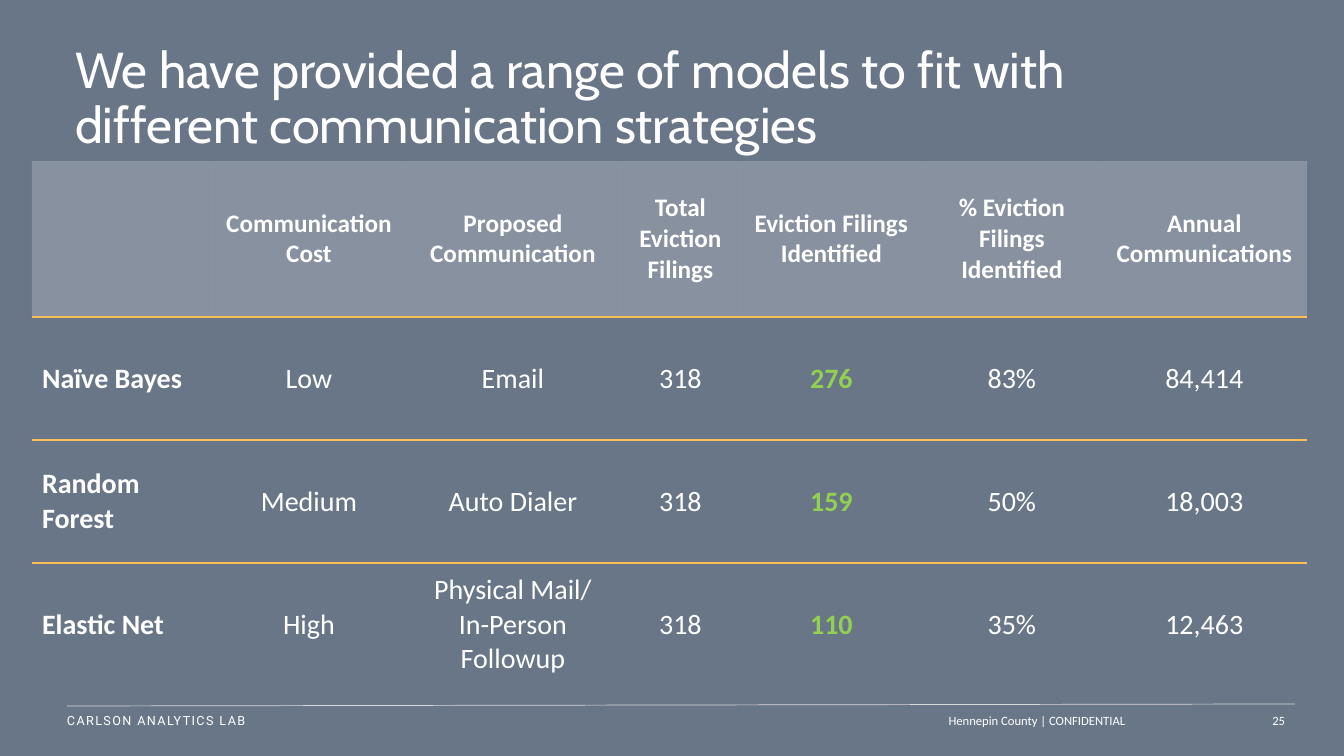
from lxml.etree import SubElement
from pptx import Presentation
from pptx.dml.color import RGBColor
from pptx.enum.shapes import MSO_CONNECTOR as Connector
from pptx.enum.text import MSO_ANCHOR as Anchor, PP_ALIGN as Align
from pptx.oxml import parse_xml
from pptx.oxml.ns import nsdecls, qn
from pptx.util import Pt

EMU_PER_PX = 12192000 / 1344

SLATE = RGBColor(0x69, 0x76, 0x88)
WHITE = RGBColor(0xFF, 0xFF, 0xFF)
RULE_GREY = RGBColor(0xD9, 0xD9, 0xD9)
AMBER = RGBColor(0xFD, 0xBE, 0x57)
GREEN = RGBColor(0x92, 0xD0, 0x50)

NO_STYLE = "{2D5ABB26-0587-4C30-8999-92F81FD0307C}"
COLUMN_WIDTHS = [180, 194, 214, 121, 181, 180, 205]
ROW_HEIGHTS = [156, 123, 123, 123]
IDENTIFIED_COLUMN = 4
MODELS = [
    ["", "Communication Cost", "Proposed Communication", "Total Eviction Filings",
     "Eviction Filings Identified", "% Eviction Filings Identified",
     "Annual Communications"],
    ["Naïve Bayes", "Low", "Email", "318", "276", "83%", "84,414"],
    ["Random Forest", "Medium", "Auto Dialer", "318", "159", "50%", "18,003"],
    ["Elastic Net", "High", "Physical Mail/\nIn-Person Followup", "318", "110", "35%",
     "12,463"],
]


def px(length):
    return round(length * EMU_PER_PX)


def style_text(frame, font, size, color=WHITE, bold=False, align=Align.LEFT):
    for paragraph in frame.paragraphs:
        paragraph.alignment = align
        for run in paragraph.runs:
            run.font.name = font
            run.font.size = Pt(size)
            run.font.bold = bold
            run.font.color.rgb = color


def add_label(slide, box, text, font, size, align=Align.LEFT, inset=10):
    """Add a vertically centred text box and return its first paragraph."""
    frame = slide.shapes.add_textbox(*map(px, box)).text_frame
    frame.word_wrap = True
    frame.vertical_anchor = Anchor.MIDDLE
    frame.margin_left = px(inset)
    frame.text = text
    style_text(frame, font, size, align=align)
    return frame.paragraphs[0]


def add_title(slide, box):
    title = add_label(
        slide, box,
        "We have provided a range of models to fit with different communication strategies",
        "Cabin", 36)
    title.line_spacing = 0.9


def underline(cell):
    cell._tc.get_or_add_tcPr().insert(0, parse_xml(
        f'<a:lnB {nsdecls("a")} w="{Pt(1)}"><a:solidFill>'
        f'<a:srgbClr val="{AMBER}"/></a:solidFill></a:lnB>'))


def tint(cell, percent):
    """Fill the cell with white at the given opacity."""
    cell.fill.solid()
    cell.fill.fore_color.rgb = WHITE
    white = cell._tc.tcPr.find(f'{qn("a:solidFill")}/{qn("a:srgbClr")}')
    SubElement(white, qn("a:alpha")).set("val", str(percent * 1000))


def fill_cell(cell, row, column):
    header, model_name = row == 0, column == 0
    identified = column == IDENTIFIED_COLUMN and not header
    cell.vertical_anchor = Anchor.MIDDLE
    cell.text_frame.text = MODELS[row][column]
    style_text(cell.text_frame, "Calibri", 18 if header else 20,
               color=GREEN if identified else WHITE,
               bold=header or model_name or identified,
               align=Align.LEFT if model_name else Align.CENTER)
    if header:
        tint(cell, 20)
    else:
        cell.fill.background()
    if row < len(MODELS) - 1:
        underline(cell)


def add_model_table(slide, left, top):
    frame = slide.shapes.add_table(
        len(MODELS), len(COLUMN_WIDTHS), px(left), px(top),
        px(sum(COLUMN_WIDTHS)), px(sum(ROW_HEIGHTS)))
    table = frame.table
    table.horz_banding = False
    table._tbl.tblPr.find(qn("a:tableStyleId")).text = NO_STYLE
    for column, width in zip(table.columns, COLUMN_WIDTHS):
        column.width = px(width)
    for row, height in zip(table.rows, ROW_HEIGHTS):
        row.height = px(height)
    for row in range(len(MODELS)):
        for column in range(len(COLUMN_WIDTHS)):
            fill_cell(table.cell(row, column), row, column)


def add_footer(slide, left, top, width):
    right = left + width
    rule = slide.shapes.add_connector(
        Connector.STRAIGHT, px(left), px(top + 2), px(right), px(top))
    rule.line.color.rgb = RULE_GREY
    rule.line.width = Pt(0.5)
    SubElement(rule._element.spPr, qn("a:effectLst"))

    lab = add_label(slide, (left, top, 327, 33), "CARLSON ANALYTICS LAB",
                    "Roboto", 9, inset=0)
    lab.runs[0]._r.get_or_add_rPr().set("spc", "100")
    add_label(slide, (right - 759, top + 1, 599, 32), "Hennepin County | CONFIDENTIAL",
              "Calibri", 9, Align.RIGHT)
    add_label(slide, (right - 45, top, 45, 32), "25", "Calibri", 9, Align.RIGHT, inset=0)


def main():
    deck = Presentation()
    deck.slide_width, deck.slide_height = px(1344), px(756)
    slide = deck.slides.add_slide(deck.slide_layouts[6])
    slide.background.fill.solid()
    slide.background.fill.fore_color.rgb = SLATE
    add_title(slide, (65, 44, 1129, 111))
    add_model_table(slide, 32, 161)
    add_footer(slide, 67, 704, 1228)
    deck.save("out.pptx")


if __name__ == "__main__":
    main()
